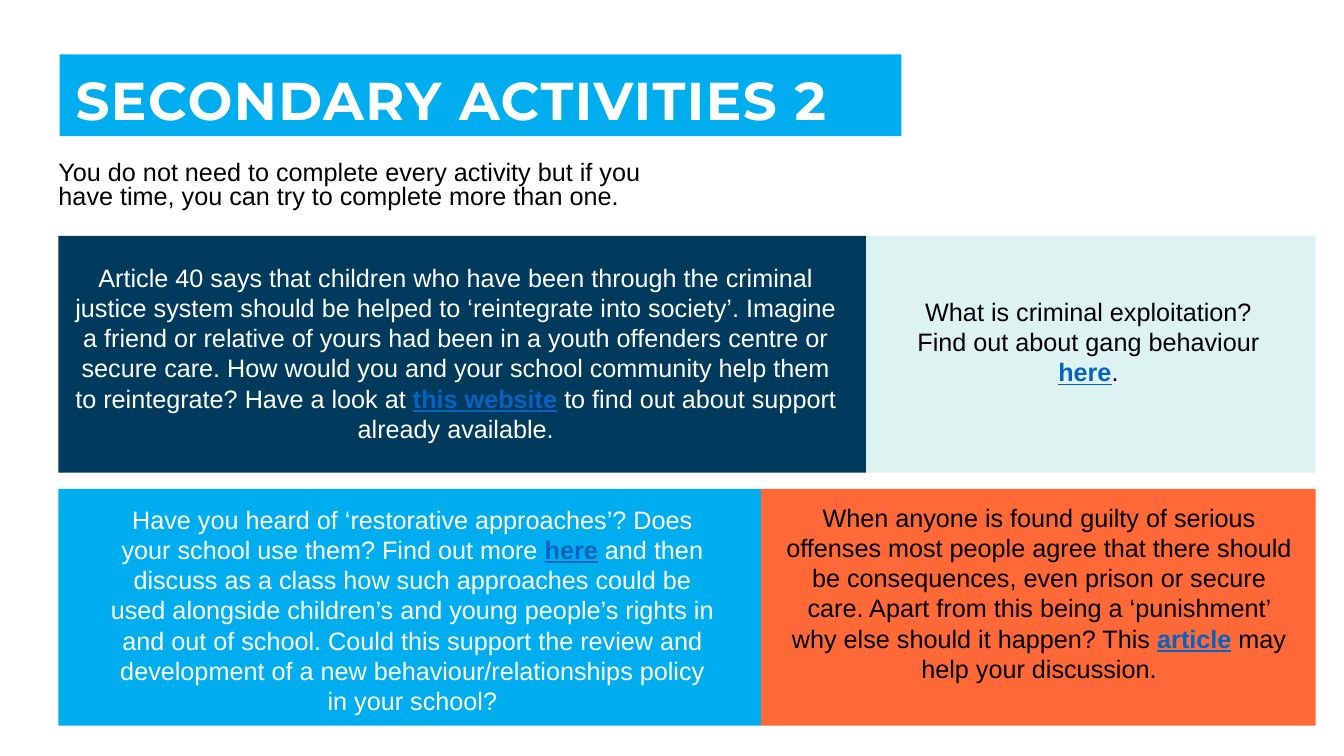
from pptx import Presentation
from pptx.dml.color import RGBColor
from pptx.enum.shapes import MSO_SHAPE
from pptx.enum.text import MSO_ANCHOR, PP_ALIGN
from pptx.util import Inches, Pt

WHITE = RGBColor(0xFF, 0xFF, 0xFF)
BLACK = RGBColor(0x00, 0x00, 0x00)
SKY = RGBColor(0x00, 0xAE, 0xEF)
NAVY = RGBColor(0x00, 0x3B, 0x5E)
MINT = RGBColor(0xDD, 0xF3, 0xF1)
ORANGE = RGBColor(0xFF, 0x69, 0x37)
LINK_BLUE = RGBColor(0x05, 0x63, 0xC1)

# Content
TITLE = "SECONDARY ACTIVITIES 2"
INTRO = ("You do not need to complete every activity but if you have time, "
         "you can try to complete more than one.")

# Rows of cards: panel width, fill, text colour, text box, (before, link, after)
ACTIVITY_ROWS = [
    [
        (8.01, NAVY, WHITE, (0.58, 2.55, 7.88, 1.92),
         ("Article 40 says that children who have been through the criminal "
          "justice system should be helped to ‘reintegrate into society’. "
          "Imagine a friend or relative of yours had been in a youth offenders "
          "centre or secure care. How would you and your school community help "
          "them to reintegrate? Have a look at ",
          "this website",
          " to find out about support already available.")),
        (4.46, MINT, BLACK, (8.84, 2.89, 3.91, 1.01),
         ("What is criminal exploitation? Find out about gang behaviour ",
          "here",
          ".")),
    ],
    [
        (6.97, SKY, WHITE, (0.99, 4.95, 6.2, 2.22),
         ("Have you heard of ‘restorative approaches’? Does your school use "
          "them? Find out more ",
          "here",
          " and then discuss as a class how such approaches could be used "
          "alongside children’s and young people’s rights in and out of school. "
          "Could this support the review and development of a new "
          "behaviour/relationships policy in your school?")),
        (5.5, ORANGE, BLACK, (7.7, 4.93, 5.21, 1.92),
         ("When anyone is found guilty of serious offenses most people agree "
          "that there should be consequences, even prison or secure care. Apart "
          "from this being a ‘punishment’ why else should it happen? This ",
          "article",
          " may help your discussion.")),
    ],
]

# Layout
LEFT, TOP = 0.58, 2.34
PANEL_HEIGHT, ROW_GAP = 2.35, 0.16


def add_panel(slide, box, fill):
    panel = slide.shapes.add_shape(MSO_SHAPE.RECTANGLE, *map(Inches, box))
    panel.shadow.inherit = False
    panel.fill.solid()
    panel.fill.fore_color.rgb = fill
    panel.line.fill.background()
    return panel


def add_text_box(slide, box):
    text_frame = slide.shapes.add_textbox(*map(Inches, box)).text_frame
    text_frame.word_wrap = True
    return text_frame


def format_font(font, color, size=18, name="Arial", bold=False):
    font.name = name
    font.size = Pt(size)
    font.bold = bold
    font.color.rgb = color


def add_title(slide):
    text_frame = add_panel(slide, (0.59, 0.54, 8.35, 0.81), SKY).text_frame
    text_frame.margin_left = text_frame.margin_top = Inches(0.16)
    text_frame.margin_right, text_frame.margin_bottom = Inches(0.12), 0
    text_frame.vertical_anchor = MSO_ANCHOR.MIDDLE
    text_frame.word_wrap = True
    text_frame.text = TITLE
    paragraph = text_frame.paragraphs[0]
    paragraph.alignment = PP_ALIGN.LEFT
    paragraph.line_spacing = 0.9
    run = paragraph.runs[0]
    format_font(run.font, WHITE, 38, "Montserrat", True)
    run._r.get_or_add_rPr().set("spc", "100")  # letter spacing of 1 pt


def add_intro(slide):
    text_frame = add_text_box(slide, (LEFT, 1.56, 6.21, 0.62))
    text_frame.margin_left = 0
    text_frame.text = INTRO
    paragraph = text_frame.paragraphs[0]
    paragraph.line_spacing = 0.8
    format_font(paragraph.runs[0].font, BLACK)


def add_activity_text(slide, box, color, parts):
    paragraph = add_text_box(slide, box).paragraphs[0]
    paragraph.alignment = PP_ALIGN.CENTER
    before, link, after = (paragraph.add_run() for _ in parts)
    for run, text in zip((before, link, after), parts):
        run.text = text
        format_font(run.font, color)
    format_font(link.font, LINK_BLUE, bold=True)
    link.font.underline = True


def main():
    presentation = Presentation()
    presentation.slide_width = Inches(13.33)
    presentation.slide_height = Inches(7.5)
    slide = presentation.slides.add_slide(presentation.slide_layouts[6])

    add_title(slide)
    add_intro(slide)

    # Activity cards, side by side in each row
    for row, cards in enumerate(ACTIVITY_ROWS):
        left = LEFT
        top = TOP + row * (PANEL_HEIGHT + ROW_GAP)
        for width, fill, color, text_box, parts in cards:
            add_panel(slide, (left, top, width, PANEL_HEIGHT), fill)
            add_activity_text(slide, text_box, color, parts)
            left += width

    presentation.save("out.pptx")


if __name__ == "__main__":
    main()
